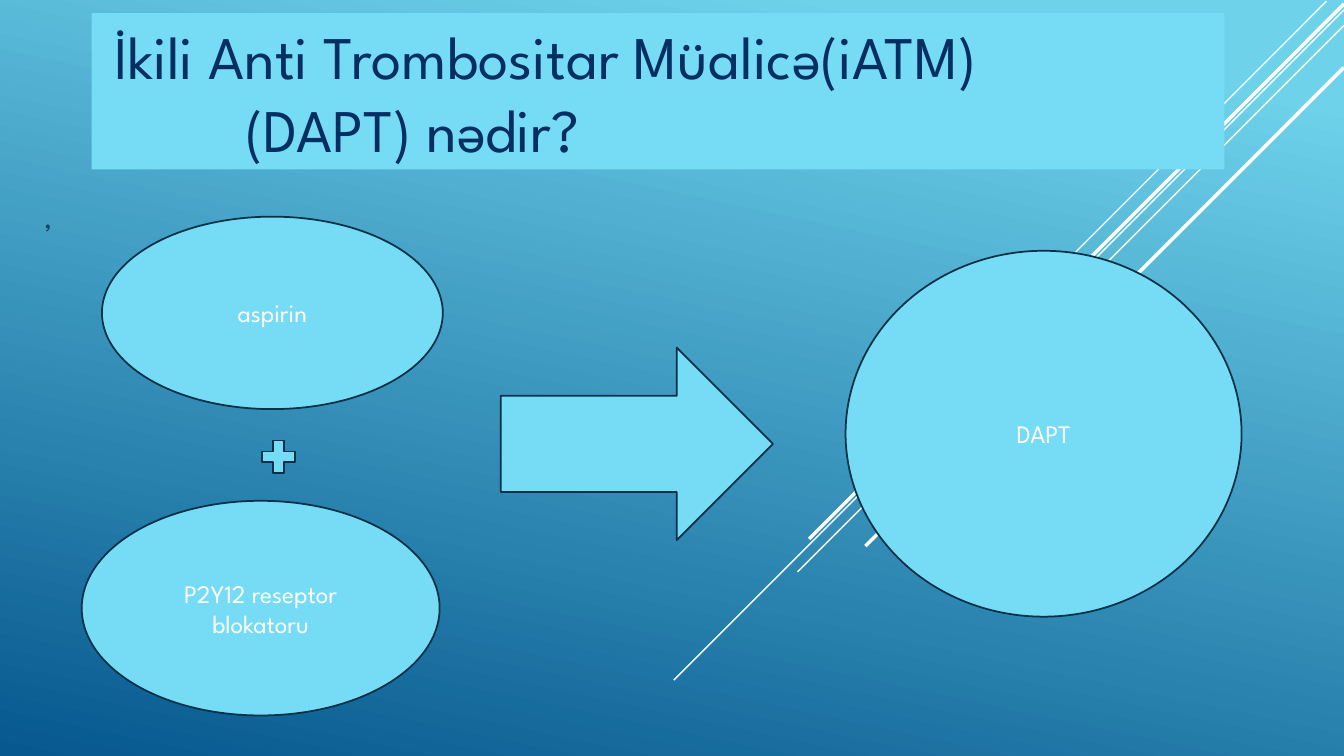
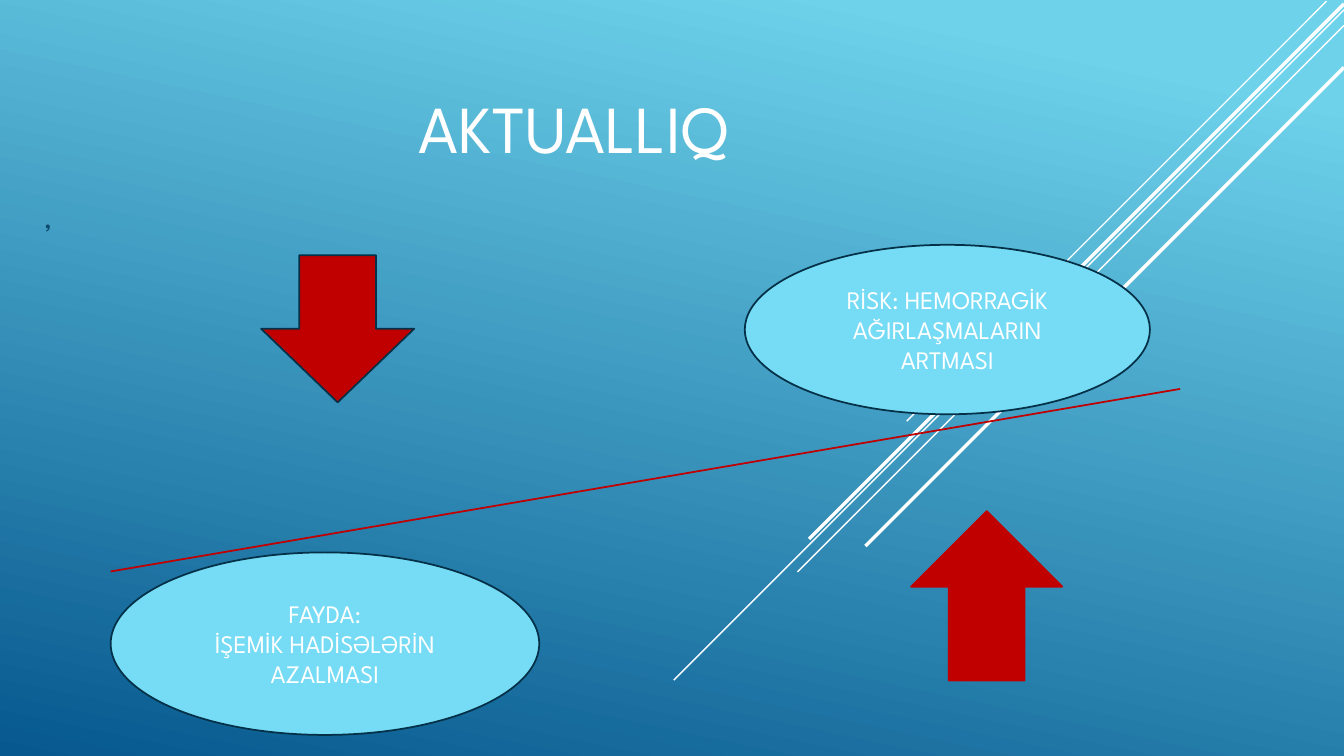
from pptx import Presentation
from pptx.dml.color import RGBColor
from pptx.enum.shapes import MSO_CONNECTOR, MSO_SHAPE
from pptx.enum.text import MSO_ANCHOR, PP_ALIGN
from pptx.oxml.ns import qn
from pptx.util import Cm, Pt
from lxml import etree

OVAL, PLUS = MSO_SHAPE.OVAL, MSO_SHAPE.MATH_PLUS
RIGHT, DOWN, UP = MSO_SHAPE.RIGHT_ARROW, MSO_SHAPE.DOWN_ARROW, MSO_SHAPE.UP_ARROW
STRAIGHT = MSO_CONNECTOR.STRAIGHT
TOP, MIDDLE, BOTTOM = MSO_ANCHOR.TOP, MSO_ANCHOR.MIDDLE, MSO_ANCHOR.BOTTOM
LEFT, CENTER = PP_ALIGN.LEFT, PP_ALIGN.CENTER

FONT = "League Spartan"
WHITE, SKY, RED = "FFFFFF", "76DBF4", "C00000"
NAVY, TEAL, EDGE = "052F61", "0F496F", "043148"
WIDTH, HEIGHT = 33.87, 19.05

# Diagonal rays at 45 degrees: right end x, y, run, line width
RAYS = [
    (33.43, 0.03, 10.58, 1),
    (WIDTH, 0.25, 16.89, 1),
    (WIDTH, 0.64, 13.77, 1),
    (WIDTH, 0.1, 13.48, 2.5),
    (WIDTH, 1.7, 12.06, 2.5),
]


def rgb(code):
    return RGBColor.from_string(code)


def write(frame, *lines, size=18, color=WHITE, align=CENTER, anchor=MIDDLE,
          indents=()):
    """Fill a text frame, one paragraph a line, with left indents in cm."""
    frame.word_wrap = True
    frame.vertical_anchor = anchor
    for i, line in enumerate(lines):
        para = frame.paragraphs[0] if i == 0 else frame.add_paragraph()
        para.alignment = align
        if indents:
            para._p.get_or_add_pPr().set("marL", str(Cm(indents[i])))
        run = para.add_run()
        run.text = line
        run.font.name = FONT
        run.font.size = Pt(size)
        run.font.color.rgb = rgb(color)


class Deck:
    def __init__(self):
        self.prs = Presentation()
        self.prs.slide_width, self.prs.slide_height = Cm(WIDTH), Cm(HEIGHT)
        self.slide = None

    def page(self):
        """Start a slide with the shared backdrop."""
        self.slide = self.prs.slides.add_slide(self.prs.slide_layouts[6])
        fill = self.slide.background.fill
        fill.gradient()
        fill.gradient_angle = 258
        for stop, place, code in zip(fill.gradient_stops, (0.1, 1),
                                     ("6ED2EB", "06588E")):
            stop.position = place
            stop.color.rgb = rgb(code)
        for x, y, run, width in RAYS:
            self.line(x, y, x - run, y + run, WHITE, width)

    def line(self, x1, y1, x2, y2, color, width=1.25):
        line = self.slide.shapes.add_connector(
            STRAIGHT, Cm(x1), Cm(y1), Cm(x2), Cm(y2))
        line.line.color.rgb = rgb(color)
        line.line.width = Pt(width)
        etree.SubElement(line._element.spPr, qn("a:effectLst"))

    def text(self, box, *lines, fill=None, **style):
        area = self.slide.shapes.add_textbox(*map(Cm, box))
        if fill:
            area.fill.solid()
            area.fill.fore_color.rgb = rgb(fill)
        write(area.text_frame, *lines, align=LEFT, **style)

    def title(self, box, *lines, **style):
        self.text(box, *lines, anchor=BOTTOM, **style)

    def body(self):
        self.text((0.86, 4.9, 31.75, 13.84), ",", size=21, color=TEAL,
                  anchor=TOP)

    def shape(self, kind, box, *lines, fill=SKY, edge=EDGE):
        shape = self.slide.shapes.add_shape(kind, *map(Cm, box))
        shape.shadow.inherit = False
        shape.fill.solid()
        shape.fill.fore_color.rgb = rgb(fill)
        shape.line.color.rgb = rgb(edge)
        shape.line.width = Pt(1.25)
        write(shape.text_frame, *lines)


def main():
    deck = Deck()

    # What dual therapy is
    deck.page()
    deck.title((2.31, 0.33, 28.55, 3.94), "İkili Anti Trombositar Müalicə(iATM)",
               "(DAPT) nədir?", fill=SKY, size=43.2, color=NAVY,
               indents=(0.32, 3.63))
    deck.body()
    deck.shape(OVAL, (2.57, 5.46, 8.59, 4.85), "aspirin")
    deck.shape(OVAL, (2.06, 12.62, 9.02, 5.41), "P2Y12 reseptor blokatoru")
    deck.shape(RIGHT, (12.62, 8.76, 6.86, 4.85))
    deck.shape(OVAL, (21.31, 6.32, 9.98, 9.22), "DAPT")
    deck.shape(PLUS, (6.45, 10.95, 1.14, 1.12))

    # Benefit against risk
    deck.page()
    deck.title((2.79, 1.9, 28.12, 2.44), "AKTUALLIQ", size=48, indents=(7.52,))
    deck.body()
    deck.shape(DOWN, (6.58, 6.43, 3.86, 3.71), fill=RED)
    deck.shape(UP, (22.96, 12.88, 3.81, 4.27), fill=RED, edge=RED)
    deck.line(29.74, 9.8, 2.79, 14.4, RED)
    deck.shape(OVAL, (2.79, 13.92, 10.8, 4.6), "FAYDA:",
               "İŞEMİK HADİSƏLƏRİN AZALMASI")
    deck.shape(OVAL, (18.77, 6.17, 10.21, 4.27),
               "RİSK: HEMORRAGİK AĞIRLAŞMALARIN ARTMASI")

    deck.prs.save("out.pptx")


if __name__ == "__main__":
    main()
